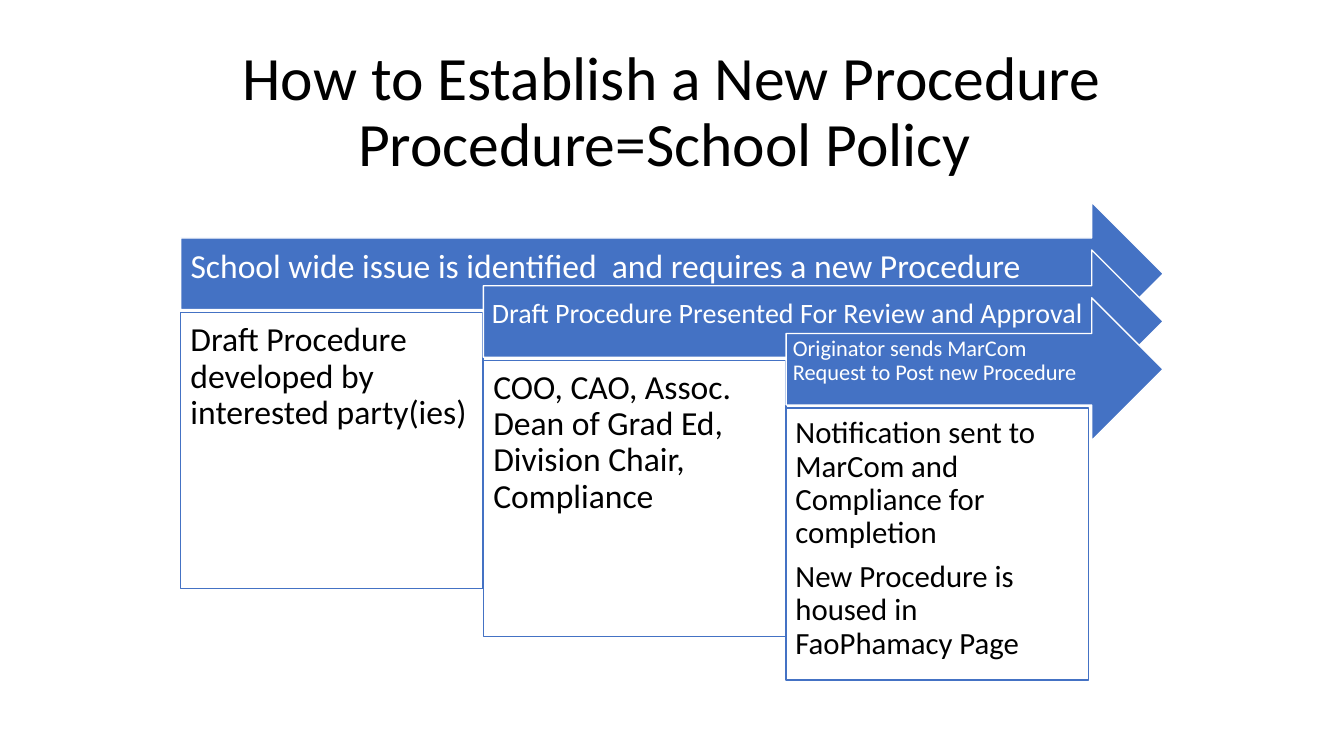
from pptx import Presentation
from pptx.dml.color import RGBColor
from pptx.enum import shapes, text
from pptx.util import Pt

# Content
TITLE = "How to Establish a New Procedure\vProcedure=School Policy "
STEPS = [
    dict(head="School wide issue is identified  and requires a new Procedure",
         head_size=24, head_inset=7.2,
         body=["Draft Procedure developed by interested party(ies)"],
         body_size=24, body_inset=7.2, box_height=197.3),
    dict(head="Draft Procedure Presented For Review and Approval",
         head_size=20, head_inset=6,
         body=["COO, CAO, Assoc. Dean of Grad Ed, Division Chair, Compliance"],
         body_size=24, body_inset=7.2, box_height=197.3),
    dict(head="Originator sends MarCom Request to Post new Procedure",
         head_size=16, head_inset=4.8,
         body=["Notification sent to MarCom and Compliance for completion",
               "New Procedure is housed in FaoPhamacy Page"],
         body_size=22, body_inset=6.6, box_height=194.4),
]

# Layout in points and colours
LEFT, TOP, RIGHT = 129, 144.5, 830.9
STEP_X, STEP_Y = 216.3, 34.1
ARROW_HEIGHT, BOX_DROP, BOX_WIDTH = 102.1, 78.8, 216.1
BLUE, WHITE, BLACK = "4472C4", "FFFFFF", "000000"


def rgb(value):
    return RGBColor.from_string(value)


def write(s, paragraphs, size, color, insets, anchor, align):
    tf = s.text_frame
    frame_format = dict(word_wrap=True, vertical_anchor=anchor)
    for side, inset in zip(("left", "top", "right", "bottom"), insets):
        frame_format["margin_" + side] = Pt(inset)
    for name, value in frame_format.items():
        setattr(tf, name, value)
    for i, line in enumerate(paragraphs):
        p = tf.add_paragraph() if i else tf.paragraphs[0]
        p.text = line
        gap = Pt(0.35 * size) if i < len(paragraphs) - 1 else Pt(0)
        for name, value in dict(alignment=align, line_spacing=0.9,
                                space_after=gap).items():
            setattr(p, name, value)
        for r in p.runs:
            for name, value in dict(name="Calibri", size=Pt(size)).items():
                setattr(r.font, name, value)
            r.font.color.rgb = rgb(color)


def add_block(kind, x, y, w, h, fill, line):
    s = slide.shapes.add_shape(kind, Pt(x), Pt(y), Pt(w), Pt(h))
    s.shadow.inherit = False
    s.fill.solid()
    s.fill.fore_color.rgb = rgb(fill)
    s.line.color.rgb = rgb(line)
    s.line.width = Pt(1)
    return s


prs = Presentation()
prs.slide_width, prs.slide_height = Pt(960), Pt(540)
slide = prs.slides.add_slide(prs.slide_layouts[6])
SHAPE, ANCHOR, ALIGN = shapes.MSO_SHAPE, text.MSO_ANCHOR, text.PP_ALIGN

# Title
title = slide.shapes.add_textbox(Pt(66), Pt(28.8), Pt(828), Pt(104.4))
write(title, [TITLE], 44, BLACK, (7.2, 3.6, 7.2, 3.6),
      ANCHOR.MIDDLE, ALIGN.CENTER)

# Cascading arrows, each with its box below
for i, step in enumerate(STEPS):
    x, y = LEFT + i * STEP_X, TOP + i * STEP_Y
    arrow = add_block(SHAPE.RIGHT_ARROW, x, y, RIGHT - x, ARROW_HEIGHT,
                      BLUE, WHITE)
    inset = step["head_inset"]
    write(arrow, [step["head"]], step["head_size"], WHITE,
          (inset, inset, 20, 16.2), ANCHOR.MIDDLE, ALIGN.LEFT)
    box = add_block(SHAPE.RECTANGLE, x, y + BOX_DROP, BOX_WIDTH,
                    step["box_height"], WHITE, BLUE)
    write(box, step["body"], step["body_size"], BLACK,
          [step["body_inset"]] * 4, ANCHOR.TOP, ALIGN.LEFT)

prs.save("out.pptx")
